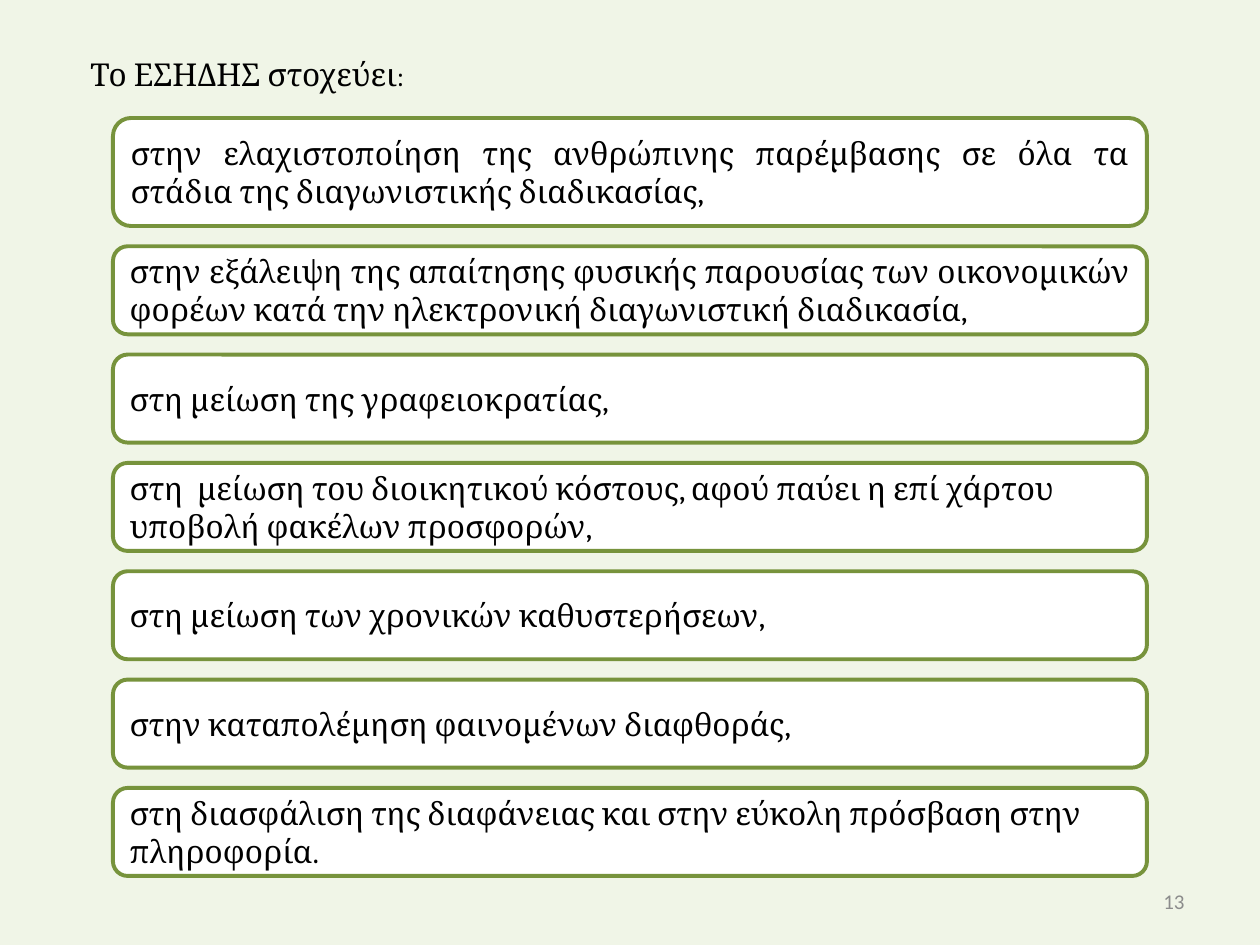
from pptx import Presentation
from pptx.dml.color import RGBColor
from pptx.enum.shapes import MSO_SHAPE as Shape
from pptx.enum.text import MSO_ANCHOR as Anchor, MSO_AUTO_SIZE as AutoSize, PP_ALIGN as Align
from pptx.util import Pt

PX = 914400 // 126
BACKGROUND, GREEN, WHITE, BLACK, GRAY = "F0F5E7", "77933C", "FFFFFF", "000000", "8C8C8C"

HEADING = [("Το ΕΣΗΔΗΣ στοχεύει", 18), (":", 16)]
GOALS = [
    ("στην ελαχιστοποίηση της ανθρώπινης παρέμβασης σε όλα τα στάδια της διαγωνιστικής διαδικασίας,", Align.JUSTIFY),
    ("στην εξάλειψη της απαίτησης φυσικής παρουσίας των οικονομικών φορέων κατά την ηλεκτρονική διαγωνιστική διαδικασία,", Align.JUSTIFY),
    ("στη μείωση της γραφειοκρατίας,", Align.LEFT),
    ("στη  μείωση του διοικητικού κόστους, αφού παύει η επί χάρτου υποβολή φακέλων προσφορών,", Align.LEFT),
    ("στη μείωση των χρονικών καθυστερήσεων,", Align.LEFT),
    ("στην καταπολέμηση φαινομένων διαφθοράς,", Align.LEFT),
    ("στη διασφάλιση της διαφάνειας και στην εύκολη πρόσβαση στην πληροφορία.", Align.LEFT),
]
PAGE_NUMBER = [("13", 12)]

STACK_LEFT, STACK_TOP, STACK_BOTTOM, STACK_WIDTH = 113, 118, 876, 1034
FIRST_HEIGHT, GOAL_HEIGHT = 108, 88


def color(value):
    return RGBColor.from_string(value)


def emu(*lengths):
    return [round(length * PX) for length in lengths]


def write(shape, runs, align, anchor, font="Cambria", ink=BLACK):
    frame = shape.text_frame
    frame.word_wrap = True
    frame.vertical_anchor = anchor
    paragraph = frame.paragraphs[0]
    paragraph.alignment = align
    for text, size in runs:
        run = paragraph.add_run()
        run.text = text
        run.font.name = font
        run.font.size = Pt(size)
        run.font.color.rgb = color(ink)


def add_goal(slide, text, align, top, height):
    shape = slide.shapes.add_shape(Shape.ROUNDED_RECTANGLE, *emu(STACK_LEFT, top, STACK_WIDTH, height))
    shape.shadow.inherit = False
    shape.fill.solid()
    shape.fill.fore_color.rgb = color(WHITE)
    shape.line.color.rgb = color(GREEN)
    shape.line.width = Pt(2.25)
    write(shape, [(text, 18)], align, Anchor.MIDDLE)


def main():
    presentation = Presentation()
    presentation.slide_width, presentation.slide_height = emu(1260, 945)
    slide = presentation.slides.add_slide(presentation.slide_layouts[6])
    slide.background.fill.solid()
    slide.background.fill.fore_color.rgb = color(BACKGROUND)

    number = slide.shapes.add_textbox(*emu(903, 876, 294, 50))
    write(number, PAGE_NUMBER, Align.RIGHT, Anchor.MIDDLE, "Calibri", GRAY)
    heading = slide.shapes.add_textbox(*emu(78, 49, 728, 50))
    write(heading, HEADING, Align.JUSTIFY, Anchor.TOP)
    heading.text_frame.auto_size = AutoSize.SHAPE_TO_FIT_TEXT

    heights = [FIRST_HEIGHT] + [GOAL_HEIGHT] * (len(GOALS) - 1)
    gap = (STACK_BOTTOM - STACK_TOP - sum(heights)) / (len(GOALS) - 1)
    top = STACK_TOP
    for (text, align), height in zip(GOALS, heights):
        add_goal(slide, text, align, top, height)
        top += height + gap

    presentation.save("out.pptx")


if __name__ == "__main__":
    main()
